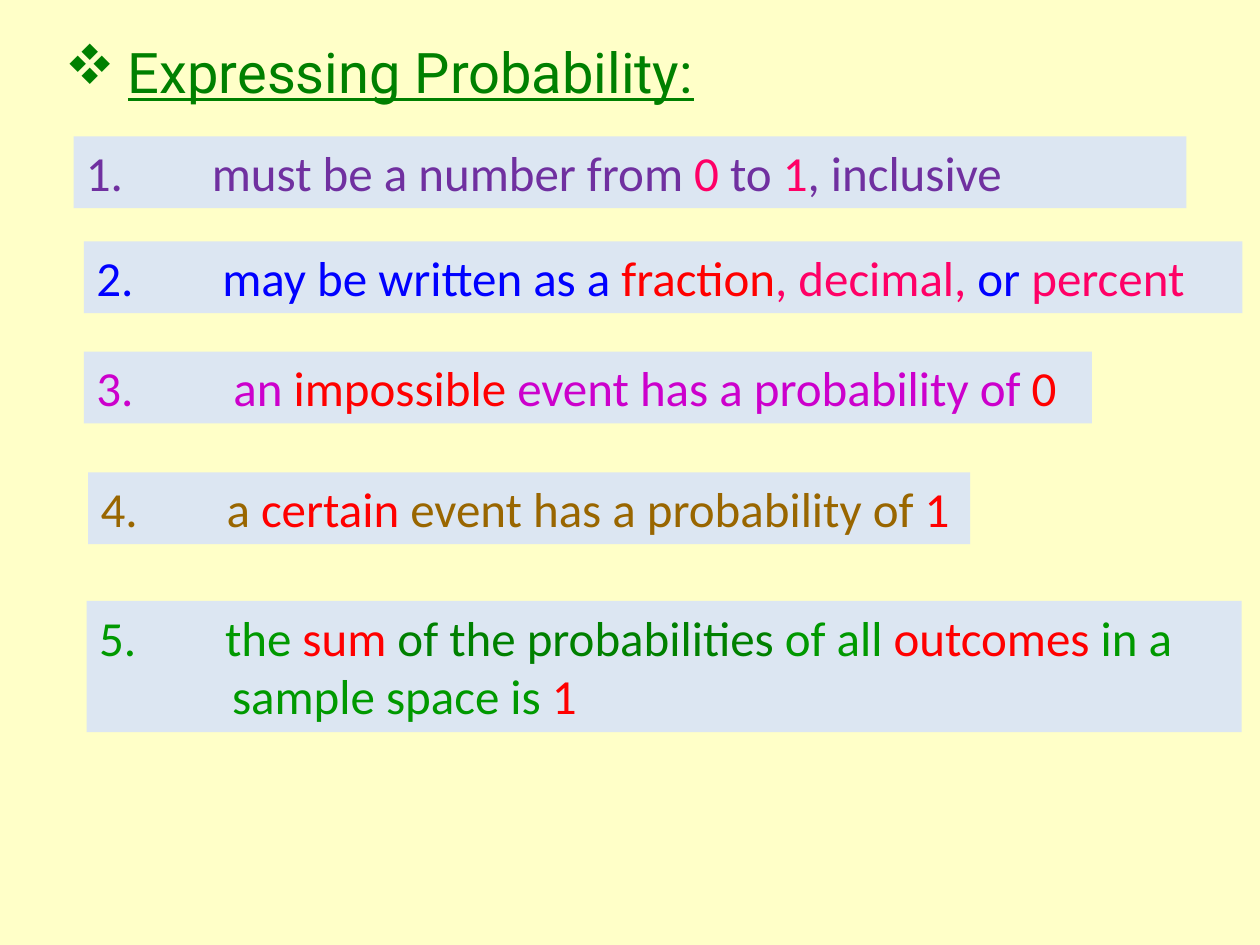
from lxml import etree
from pptx import Presentation
from pptx.dml.color import RGBColor
from pptx.enum.shapes import MSO_SHAPE
from pptx.enum.text import MSO_ANCHOR, MSO_AUTO_SIZE, PP_ALIGN
from pptx.oxml.ns import qn
from pptx.util import Pt

RECT = MSO_SHAPE.RECTANGLE
TOP = MSO_ANCHOR.TOP
LEFT = PP_ALIGN.LEFT
FIT = MSO_AUTO_SIZE.SHAPE_TO_FIT_TEXT

THEME = {
    "back": "FFFFC8", "panel": "DCE6F2",
    "title": ("Roboto", 32), "body": ("Calibri", 28), "bullet": "Wingdings",
    "purple": "7030A0", "pink": "FF0066", "blue": "0000FF", "red": "FF0000",
    "violet": "CC00CC", "brown": "996600", "green": "009900", "dark": "008000",
}

TITLE = ("Expressing Probability:", "dark")
TITLE_BOX = (30, 18, 582, 46)
TAB = 72

# Each rule: box (left, top, width, height), then paragraphs of (text, colour) runs
RULES = [
    ((42, 78, 636, 41), [[
        ("1.\tmust be a number from ", "purple"), ("0", "pink"),
        (" to ", "purple"), ("1", "pink"), (", inclusive", "purple")]]),
    ((48, 138, 662, 41), [[
        ("2.\tmay be written as a ", "blue"), ("fraction", "red"),
        (", decimal, ", "pink"), ("or", "blue"), (" percent", "pink")]]),
    ((48, 201, 576, 41), [[
        ("3.\t an ", "violet"), ("impossible", "red"),
        (" event has a probability of ", "violet"), ("0", "red")]]),
    ((50.4, 270, 504, 41), [[
        ("4.\ta ", "brown"), ("certain", "red"),
        (" event has a probability of ", "brown"), ("1", "red")]]),
    ((49.5, 343.4, 660, 75), [
        [("the ", "green"), ("sum ", "red"), ("of the probabilities ", "dark"),
         ("of all ", "green"), ("outcomes", "red"), (" in a", "green")],
        [("sample space is ", "green"), ("1", "red")]]),
]


def color(name):
    return RGBColor.from_string(THEME[name])


def write(para, runs, style, line=False):
    face, size = THEME[style]
    para.alignment = LEFT
    for text, tone in runs:
        run = para.add_run()
        run.text = text
        font = run.font
        font.name, font.size = face, Pt(size)
        font.color.rgb = color(tone)
        if line:
            font.underline = True


def indent(para, left, hang=0):
    props = para._p.get_or_add_pPr()
    props.set("marL", str(Pt(left)))
    props.set("indent", str(-Pt(hang)))
    return props


def add_tab(para):
    stops = etree.SubElement(para._p.get_or_add_pPr(), qn("a:tabLst"))
    etree.SubElement(stops, qn("a:tab"), pos=str(Pt(TAB)), algn="l")


def setup(frame):
    frame.word_wrap = True
    frame.auto_size = FIT
    frame.vertical_anchor = TOP


def panel(slide, box, paras):
    shape = slide.shapes.add_shape(RECT, *map(Pt, box))
    shape.shadow.inherit = False
    shape.fill.solid()
    shape.fill.fore_color.rgb = color("panel")
    shape.line.fill.background()
    frame = shape.text_frame
    setup(frame)
    for i, runs in enumerate(paras):
        write(frame.add_paragraph() if i else frame.paragraphs[0], runs, "body")
    return frame.paragraphs


def main():
    prs = Presentation()
    prs.slide_width, prs.slide_height = Pt(720), Pt(540)
    slide = prs.slides.add_slide(prs.slide_layouts[6])
    slide.background.fill.solid()
    slide.background.fill.fore_color.rgb = color("back")

    frame = slide.shapes.add_textbox(*map(Pt, TITLE_BOX)).text_frame
    setup(frame)
    head = frame.paragraphs[0]
    write(head, [TITLE], "title", line=True)
    props = indent(head, 36, 36)
    etree.SubElement(props, qn("a:buFont"), typeface=THEME["bullet"])
    # "v" is the four-diamond mark in the bullet font
    etree.SubElement(props, qn("a:buChar"), char="v")

    *typed, last = RULES
    for box, paras in typed:
        add_tab(panel(slide, box, paras)[0])
    # The last rule is a numbered item with a second, deeper line
    first, second = panel(slide, *last)
    etree.SubElement(indent(first, TAB, TAB), qn("a:buAutoNum"),
                     type="arabicPeriod", startAt=str(len(RULES)))
    indent(second, TAB + 4)

    prs.save("out.pptx")


if __name__ == "__main__":
    main()
